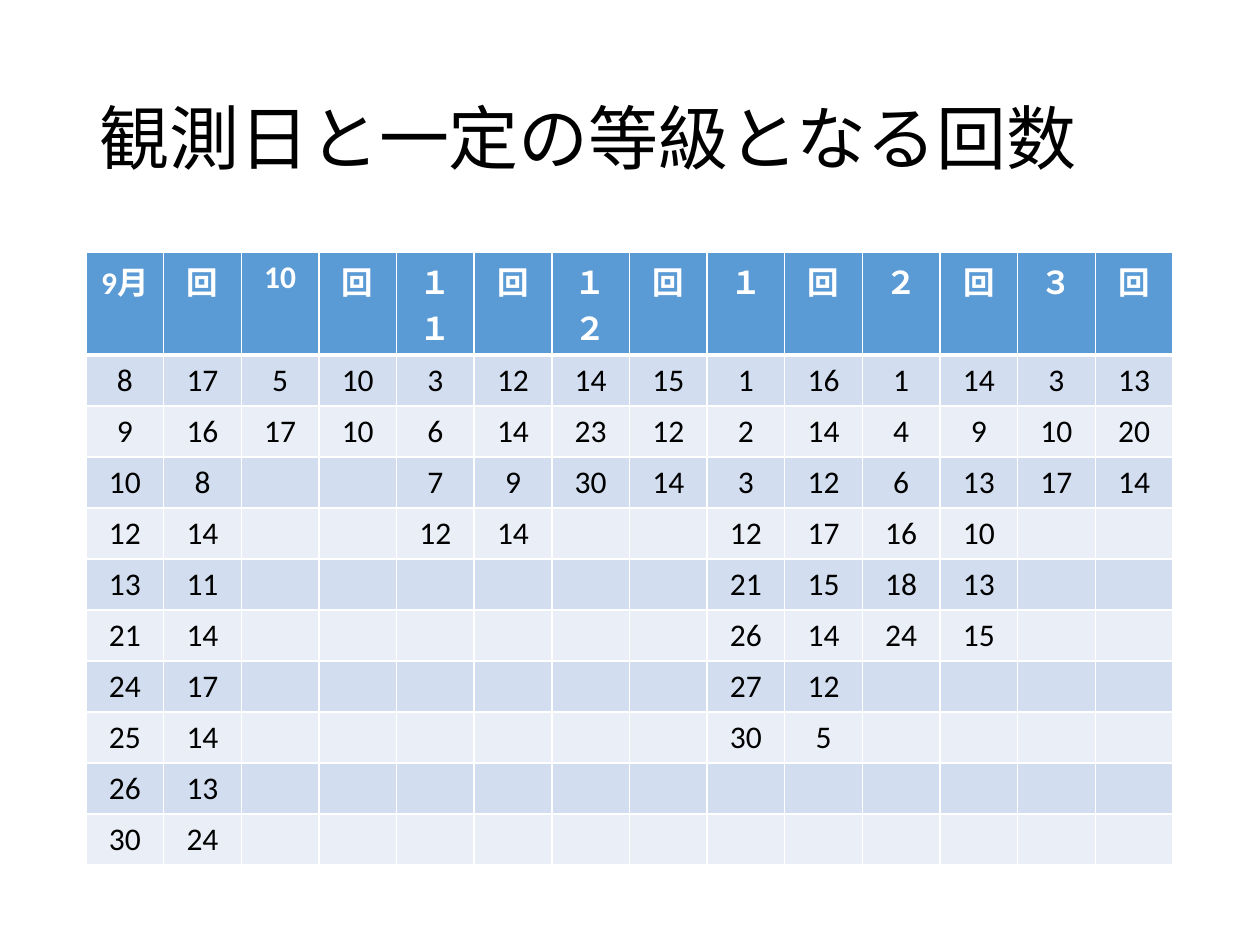
"""Build a slide with a table of observation days and counts per month."""
from lxml.etree import SubElement
from pptx import Presentation
from pptx.dml.color import RGBColor
from pptx.enum.text import MSO_ANCHOR, PP_ALIGN
from pptx.oxml.ns import qn
from pptx.util import Emu, Pt

PX = 914400 // 126
FONT = "Calibri"
WHITE, BLACK = "FFFFFF", "000000"
HEADER_FILL, BAND_FILLS = "5B9BD5", ("D2DEEF", "EAEFF7")
HEADER_HEIGHT, ROW_HEIGHT = 103, 51
MONTHS = [
    ("9月", [(8, 17), (9, 16), (10, 8), (12, 14), (13, 11),
            (21, 14), (24, 17), (25, 14), (26, 13), (30, 24)]),
    ("10", [(5, 10), (17, 10)]),
    ("１１", [(3, 12), (6, 14), (7, 9), (12, 14)]),
    ("１２", [(14, 15), (23, 12), (30, 14)]),
    ("１", [(1, 16), (2, 14), (3, 12), (12, 17),
           (21, 15), (26, 14), (27, 12), (30, 5)]),
    ("２", [(1, 14), (4, 9), (6, 13), (16, 10), (18, 13), (24, 15)]),
    ("３", [(3, 13), (10, 20), (17, 14)]),
]
ROWS = 1 + max(len(days) for _, days in MONTHS)
COLUMNS = 2 * len(MONTHS)


def style_font(paragraph, size, color, bold=False):
    paragraph.font.name = FONT
    paragraph.font.size = Pt(size)
    paragraph.font.bold = bold
    paragraph.font.color.rgb = RGBColor.from_string(color)


def style_cell(cell, fill, top, bottom):
    properties = cell._tc.get_or_add_tcPr()
    for side, width in (("L", 1), ("R", 1), ("T", top), ("B", bottom)):
        line = SubElement(properties, qn(f"a:ln{side}"), w=str(Pt(width)))
        line_fill = SubElement(line, qn("a:solidFill"))
        SubElement(line_fill, qn("a:srgbClr"), val=WHITE)
    cell.fill.solid()
    cell.fill.fore_color.rgb = RGBColor.from_string(fill)


presentation = Presentation()
presentation.slide_width = Emu(1260 * PX)
presentation.slide_height = Emu(945 * PX)
slide = presentation.slides.add_slide(presentation.slide_layouts[6])

title = slide.shapes.add_textbox(87 * PX, 50 * PX, 1087 * PX, 183 * PX)
title.text_frame.word_wrap = True
title.text_frame.vertical_anchor = MSO_ANCHOR.MIDDLE
paragraph = title.text_frame.paragraphs[0]
paragraph.text = "観測日と一定の等級となる回数"
paragraph.line_spacing = 0.9
style_font(paragraph, 40, BLACK)

table = slide.shapes.add_table(
    ROWS, COLUMNS, 86 * PX, 252 * PX, 1087 * PX, ROWS * ROW_HEIGHT * PX).table
table.rows[0].height = Emu(HEADER_HEIGHT * PX)

for month_index, (month, days) in enumerate(MONTHS):
    entries = [(month, "回"), *days]
    entries += [("", "")] * (ROWS - len(entries))
    for row, entry in enumerate(entries):
        header = row == 0
        for offset, value in enumerate(entry):
            cell = table.cell(row, 2 * month_index + offset)
            paragraph = cell.text_frame.paragraphs[0]
            paragraph.text = str(value)
            paragraph.alignment = PP_ALIGN.CENTER
            style_font(paragraph, 18, WHITE if header else BLACK, header)
            style_cell(cell, HEADER_FILL if header else BAND_FILLS[(row - 1) % 2],
                       top=3 if row == 1 else 1, bottom=3 if header else 1)

presentation.save("out.pptx")
